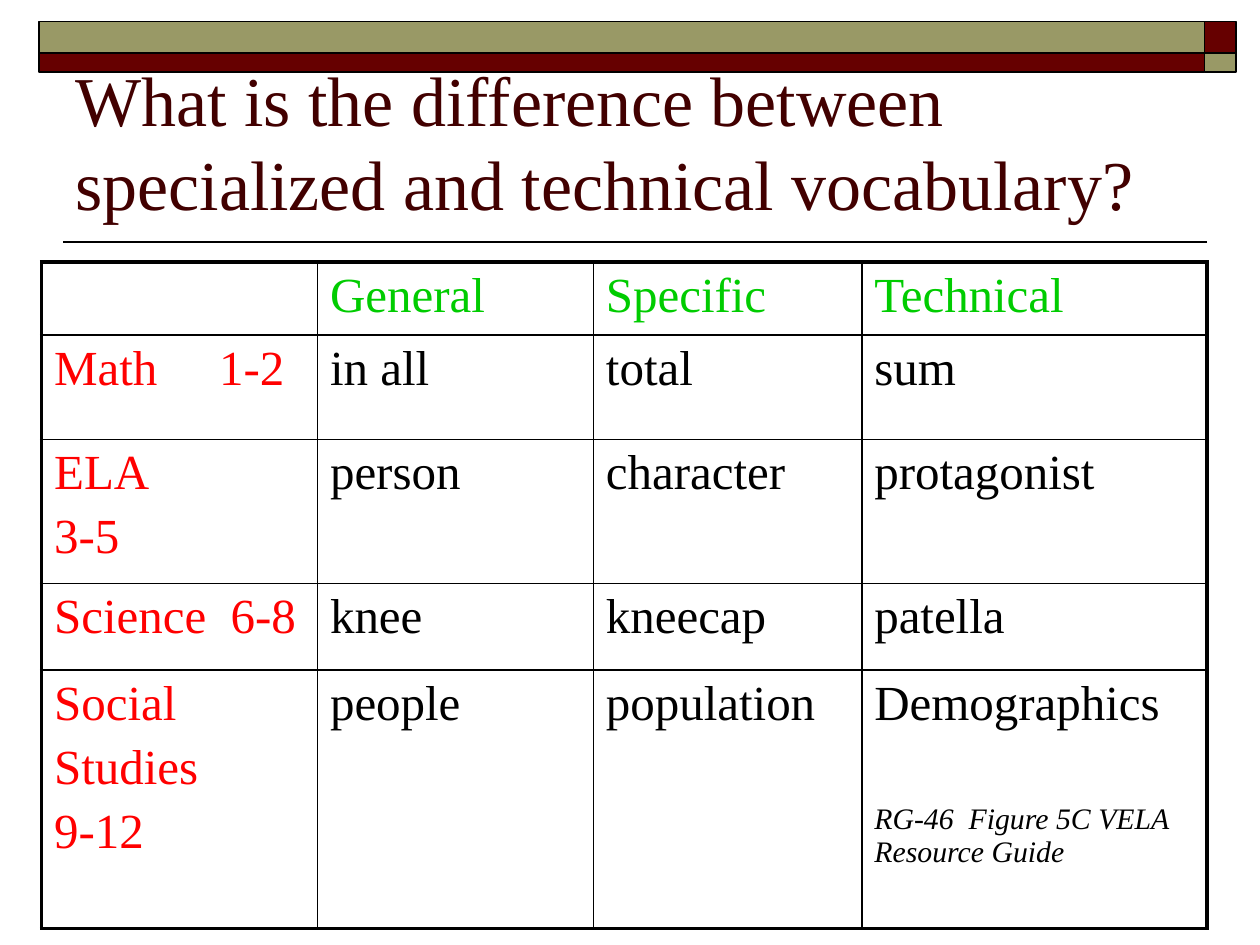
from lxml import etree
from pptx import Presentation
from pptx.dml.color import RGBColor
from pptx.enum.shapes import MSO_CONNECTOR, MSO_SHAPE
from pptx.enum.text import MSO_ANCHOR, MSO_AUTO_SIZE, PP_ALIGN
from pptx.oxml.ns import qn
from pptx.util import Inches, Pt

RECT, STRAIGHT = MSO_SHAPE.RECTANGLE, MSO_CONNECTOR.STRAIGHT
BOTTOM, LEFT, NO_FIT = MSO_ANCHOR.BOTTOM, PP_ALIGN.LEFT, MSO_AUTO_SIZE.NONE
BLACK = RGBColor(0, 0, 0)
MAROON = RGBColor(0x66, 0, 0)
OLIVE = RGBColor(0x99, 0x99, 0x66)
TITLE_COLOR = RGBColor(0x42, 0, 0)
GREEN = RGBColor(0, 0xCC, 0)
RED = RGBColor(0xFF, 0, 0)
FONT = "Times New Roman"


def style(p, size, color, italic=False):
    for r in p.runs:
        r.font.name, r.font.size, r.font.italic = FONT, Pt(size), italic
        r.font.color.rgb = color


def border(cell, side, width):
    ln = etree.SubElement(cell._tc.get_or_add_tcPr(), qn("a:ln" + side), w=str(Pt(width)))
    fill = etree.SubElement(ln, qn("a:solidFill"))
    etree.SubElement(fill, qn("a:srgbClr"), val=str(BLACK))


prs = Presentation()
prs.slide_width, prs.slide_height = Inches(10), Inches(7.5)
s = prs.slides.add_slide(prs.slide_layouts[5])

# Rule under the title
rule = s.shapes.add_connector(STRAIGHT, Inches(9.58), Inches(1.92), Inches(0.5), Inches(1.92))
rule.line.color.rgb, rule.line.width = BLACK, Pt(1)
etree.SubElement(rule._element.spPr, qn("a:effectLst"))

# Two-by-two band at the top, colours alternating
band_cols = [(0.31, 9.25), (9.56, 0.25)]
band_rows = [(0.17, 0.25), (0.42, 0.15)]
for i, (top, height) in enumerate(band_rows):
    for j, (left, width) in enumerate(band_cols):
        sp = s.shapes.add_shape(RECT, Inches(left), Inches(top), Inches(width), Inches(height))
        sp.shadow.inherit = False
        sp.fill.solid()
        sp.fill.fore_color.rgb = (OLIVE, MAROON)[(i + j) % 2]
        sp.line.color.rgb, sp.line.width = BLACK, Pt(1)

# Title, in front of the band
title = s.shapes.title
title.left, title.top, title.width, title.height = map(Inches, (0.5, 0.58, 9, 1.25))
s.shapes._spTree.append(title._element)
tf = title.text_frame
tf.text = "What is the difference between specialized and technical vocabulary?"
tf.word_wrap, tf.auto_size, tf.vertical_anchor = True, NO_FIT, BOTTOM
tf.paragraphs[0].alignment = LEFT
style(tf.paragraphs[0], 40, TITLE_COLOR)

# Vocabulary table
rows = [
    ["", "General", "Specific", "Technical"],
    ["Math\t1-2", "in all", "total", "sum"],
    ["ELA\n3-5", "person", "character", "protagonist"],
    ["Science\t6-8", "knee", "kneecap", "patella"],
    ["Social\nStudies\n9-12", "people", "population",
     "Demographics\nRG-46  Figure 5C VELA Resource Guide"],
]
col_widths = [2.19, 2.19, 2.13, 2.74]
row_heights = [0.58, 0.83, 1.14, 0.69, 2.05]
grade_tabs = {1: 1.31, 3: 1.4}
last_row, last_col = len(rows) - 1, len(col_widths) - 1

table = s.shapes.add_table(len(rows), len(col_widths), Inches(0.33), Inches(2.08),
                           Inches(sum(col_widths)), Inches(sum(row_heights))).table
table.first_row = table.horz_banding = False
for col, width in zip(table.columns, col_widths):
    col.width = Inches(width)
for row, height in zip(table.rows, row_heights):
    row.height = Inches(height)

for i, words in enumerate(rows):
    for j, text in enumerate(words):
        cell = table.cell(i, j)
        outer = {"L": j == 0, "R": j == last_col, "T": i == 0, "B": i == last_row}
        for side, is_outer in outer.items():
            border(cell, side, 2.25 if is_outer else 1)
        cell.fill.background()
        cell.text_frame.text = text
        for p in cell.text_frame.paragraphs:
            p.space_before = Pt(5.6)
            style(p, 28, GREEN if i == 0 else RED if j == 0 else BLACK)

# Tab stops that set the grades apart from the subjects
for i, stop in grade_tabs.items():
    pPr = table.cell(i, 0).text_frame.paragraphs[0]._p.get_or_add_pPr()
    tabs = etree.SubElement(pPr, qn("a:tabLst"))
    etree.SubElement(tabs, qn("a:tab"), pos=str(Inches(stop)), algn="l")

# Reference in the last cell
p = table.cell(last_row, last_col).text_frame.paragraphs[1]
p.space_before = Pt(41)
style(p, 17, BLACK, italic=True)

prs.save("out.pptx")
